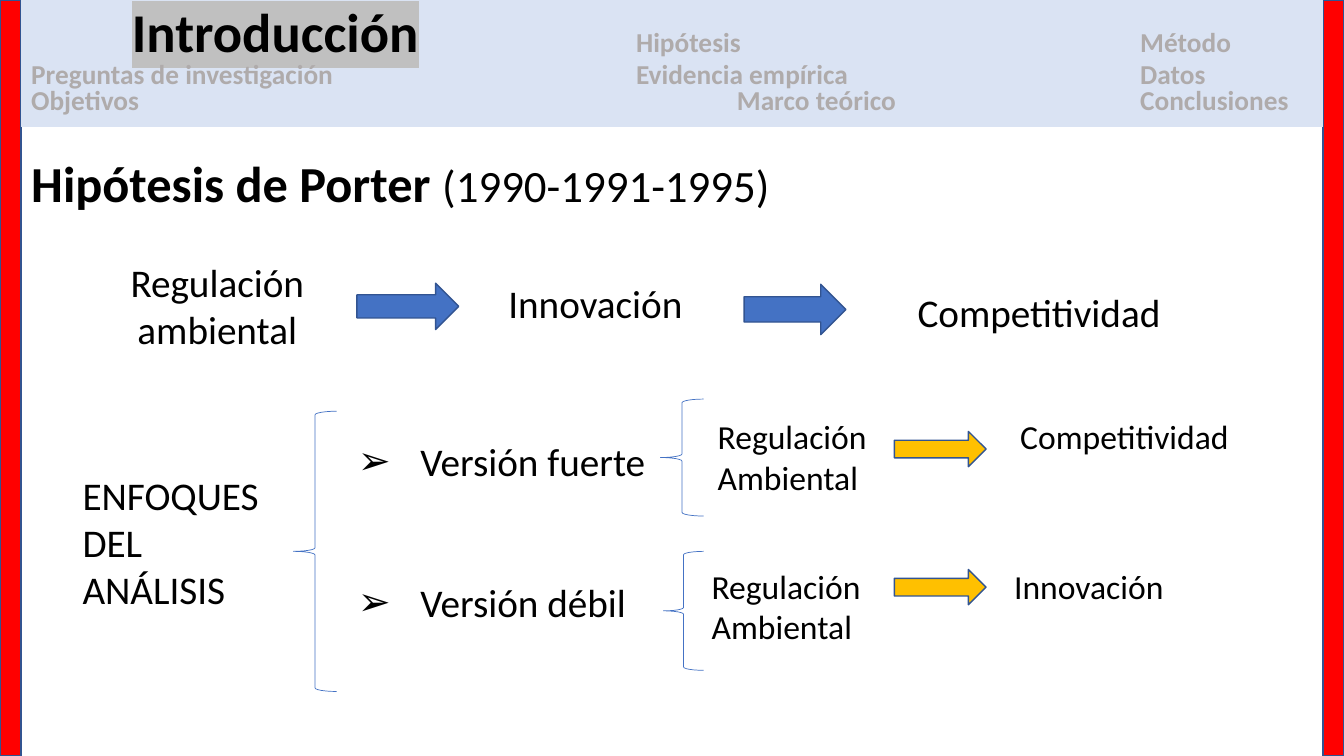
from pptx import Presentation
from pptx import util as u
from pptx.dml.color import RGBColor
from pptx.enum import shapes as s, text as t
from pptx.oxml import parse_xml
from pptx.oxml.ns import nsdecls

I = u.Inches
ARROW = s.MSO_SHAPE.RIGHT_ARROW
BRACE = s.MSO_SHAPE.LEFT_BRACE
RECT = s.MSO_SHAPE.RECTANGLE


def tint(code):
    return RGBColor.from_string(code)


def node(tag, attrs="", inner=""):
    return parse_xml(f"<a:{tag} {nsdecls('a')} {attrs}>{inner}</a:{tag}>")


def write(para, words, size=28, color="000000", bold=False, mark=None):
    run = para.add_run()
    run.text = words
    font = run.font
    font.size, font.bold, font.name = u.Pt(size), bold, "Calibri"
    font.color.rgb = tint(color)
    if mark:
        fill = run._r.rPr.find("{*}solidFill")
        fill.addnext(node("highlight", inner=f'<a:srgbClr val="{mark}"/>'))


def stops(para, places):
    tabs = "".join(f'<a:tab pos="{I(x)}" algn="l"/>' for x in places)
    para._p.get_or_add_pPr().append(node("tabLst", inner=tabs))


def bullet(para, sign, indent):
    props = para._p.get_or_add_pPr()
    props.set("marL", str(I(indent)))
    props.set("indent", str(-I(indent)))
    props.append(node("buFont", 'typeface="Calibri"'))
    props.append(node("buChar", f'char="{sign}"'))


def label(slide, box, lines, center=False, tabs=(), sign=None, gap=0, **style):
    frame = slide.shapes.add_textbox(*map(I, box)).text_frame
    frame.word_wrap = True
    for i, line in enumerate(lines):
        para = frame.add_paragraph() if i else frame.paragraphs[0]
        para.alignment = t.PP_ALIGN.CENTER if center else t.PP_ALIGN.LEFT
        if i and gap:
            para.space_before = u.Pt(gap)
        if tabs:
            stops(para, tabs)
        if sign:
            bullet(para, sign, 0.62)
        write(para, line, **style)


def form(slide, kind, box, fill=None, line=None, width=1):
    shape = slide.shapes.add_shape(kind, *map(I, box))
    shape.shadow.inherit = False
    if fill:
        shape.fill.solid()
        shape.fill.fore_color.rgb = tint(fill)
    else:
        shape.fill.background()
    if line:
        shape.line.color.rgb = tint(line)
        shape.line.width = u.Pt(width)
    else:
        shape.line.fill.background()
    return shape


def header(slide, box):
    frame = form(slide, RECT, box, "DAE3F3").text_frame
    frame.word_wrap = True
    frame.vertical_anchor = t.MSO_ANCHOR.MIDDLE
    rows = [
        ((1, 6, 11), "\tHipótesis\tMétodo"),
        ((6, 11), "Preguntas de investigación\tEvidencia empírica\tDatos"),
        ((7, 11), "Objetivos\tMarco teórico\tConclusiones"),
    ]
    for i, (places, words) in enumerate(rows):
        para = frame.add_paragraph() if i else frame.paragraphs[0]
        para.alignment = t.PP_ALIGN.LEFT
        para.line_spacing = 0.8
        stops(para, places)
        if i == 0:
            write(para, "\t", 35.1, bold=True)
            write(para, "Introducción", 39, bold=True, mark="C0C0C0")
        write(para, words, 19.5, "AFABAB", True)


def heading(slide, box):
    title = slide.shapes.title
    title.left, title.top, title.width, title.height = map(I, box)
    frame = title.text_frame
    frame.vertical_anchor = t.MSO_ANCHOR.MIDDLE
    para = frame.paragraphs[0]
    para.alignment = t.PP_ALIGN.LEFT
    para.line_spacing = 0.9
    write(para, "Hipótesis de Porter ", 36, bold=True)
    write(para, "(1990-1991-1995)", 32)


def chain(slide, x, y):
    steps = [
        (0, 0, 2.59, 1.04, ["Regulación", "ambiental"]),
        (3.74, 0.21, 2.61, 0.57, ["Innovación"]),
        (7.66, 0.3, 3.57, 0.57, ["Competitividad"]),
    ]
    for dx, dy, w, h, lines in steps:
        label(slide, (x + dx, y + dy, w, h), lines, center=True)
    for dx, dy, h in ((2.68, 0.3, 0.46), (6.52, 0.31, 0.5)):
        form(slide, ARROW, (x + dx, y + dy, 1.01, h), "4472C4", "325491")


def branch(slide, x, y, goal):
    lines = [f"Regulación\t{goal}", "Ambiental"]
    label(slide, (x, y, 5.5, 0.91), lines, tabs=[3], size=24)


def focus(slide, x, y):
    label(slide, (x, y + 0.67, 2.22, 1.51), ["ENFOQUES DEL ANÁLISIS"])
    label(slide, (x + 2.73, y + 0.33, 3.12, 1.99),
          ["Versión fuerte", "Versión débil"], sign="➢", gap=67)
    for dx, dy, w, h in ((2.19, 0.12, 0.43, 2.78), (5.83, 0, 0.43, 1.16),
                         (5.86, 1.51, 0.4, 1.18)):
        form(slide, BRACE, (x + dx, y + dy, w, h), line="4472C4", width=0.5)
    branch(slide, x + 6.3, y + 0.12, "Competitividad")
    branch(slide, x + 6.24, y + 1.6, "Innovación")
    for dy in (0.32, 1.69):
        form(slide, ARROW, (x + 8.15, y + dy, 0.91, 0.35), "FFC000", "325491")


def main():
    deck = Presentation()
    deck.slide_width, deck.slide_height = I(13.33), I(7.5)
    slide = deck.slides.add_slide(deck.slide_layouts[5])
    heading(slide, (0.21, 1.36, 9.79, 0.97))
    chain(slide, 0.86, 2.51)
    for x in (0, 13.12):
        form(slide, RECT, (x, 0, 0.21, 7.5), "FF0000", "325491")
    focus(slide, 0.72, 3.96)
    header(slide, (0.21, 0, 12.91, 1.26))
    deck.save("out.pptx")


if __name__ == "__main__":
    main()
